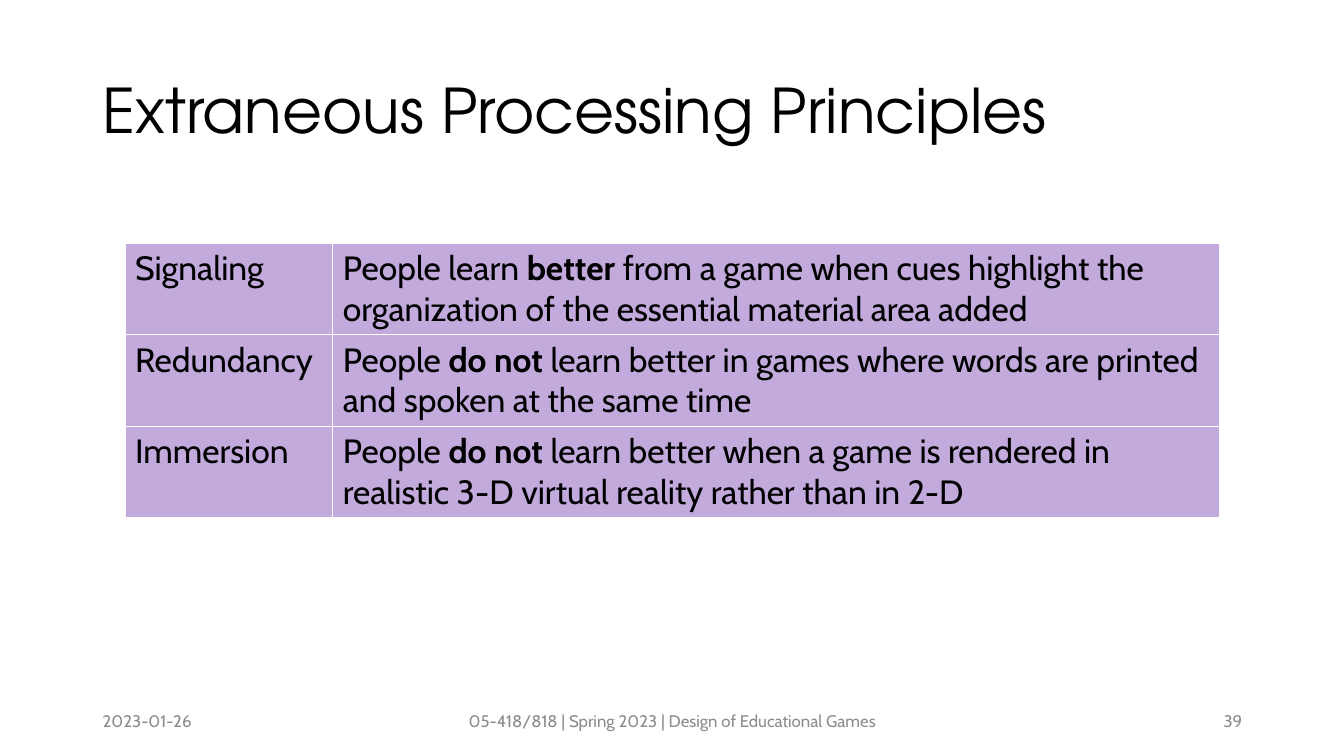
from lxml import etree
from pptx import Presentation
from pptx.dml.color import RGBColor
from pptx.enum.text import MSO_ANCHOR, PP_ALIGN
from pptx.oxml.ns import qn
from pptx.util import Inches, Pt

LEFT, CENTER, RIGHT = PP_ALIGN.LEFT, PP_ALIGN.CENTER, PP_ALIGN.RIGHT
MIDDLE = MSO_ANCHOR.MIDDLE
BLACK, GRAY, LILAC, WHITE = "000000", "8C8C8C", "C3AADD", "FFFFFF"
BODY_FONT, TITLE_FONT = "Cabin", "TeX Gyre Adventor"


def color(hex_string):
    return RGBColor.from_string(hex_string)


def style_run(run, font_name, size, hex_string, bold=False):
    run.font.name = font_name
    run.font.size = Pt(size)
    run.font.bold = bold
    run.font.color.rgb = color(hex_string)


presentation = Presentation()
presentation.slide_width = Inches(13.33)
presentation.slide_height = Inches(7.5)
slide = presentation.slides.add_slide(presentation.slide_layouts[6])

# Title and footer: text, left, top, width, height, alignment, font, size, color
text_boxes = [
    ("Extraneous Processing Principles", 0.92, 0.4, 11.5, 1.45, LEFT, TITLE_FONT, 44, BLACK),
    ("2023-01-26", 0.92, 6.95, 3, 0.4, LEFT, BODY_FONT, 12, GRAY),
    ("05-418/818 | Spring 2023 | Design of Educational Games",
     4.42, 6.95, 4.5, 0.4, CENTER, BODY_FONT, 12, GRAY),
    ("39", 9.42, 6.95, 3, 0.4, RIGHT, BODY_FONT, 12, GRAY),
]
for text, left, top, width, height, alignment, font_name, size, text_color in text_boxes:
    shape = slide.shapes.add_textbox(Inches(left), Inches(top), Inches(width), Inches(height))
    text_frame = shape.text_frame
    text_frame.word_wrap = True
    text_frame.vertical_anchor = MIDDLE
    text_frame.text = text
    paragraph = text_frame.paragraphs[0]
    paragraph.alignment = alignment
    if font_name == TITLE_FONT:
        paragraph.line_spacing = 0.9
    style_run(paragraph.runs[0], font_name, size, text_color)

# Principles: name, then the statement before, in and after the bold words
principles = [
    ("Signaling", "People learn ", "better",
     " from a game when cues highlight the organization of the essential material area added"),
    ("Redundancy", "People ", "do not ",
     "learn better in games where words are printed and spoken at the same time"),
    ("Immersion", "People ", "do not",
     " learn better when a game is rendered in realistic 3-D virtual reality rather than in 2-D"),
]
row_height = 0.91
table = slide.shapes.add_table(
    len(principles), 2, Inches(1.24), Inches(2.41),
    Inches(10.86), Inches(row_height * len(principles))).table
table.first_row = False
table.horz_banding = False
for column, width in zip(table.columns, (2.06, 8.8)):
    column.width = Inches(width)

for row, (name, before, emphasis, after) in zip(table.rows, principles):
    row.height = Inches(row_height)
    for cell, parts in zip(row.cells, ([name], [before, emphasis, after])):
        paragraph = cell.text_frame.paragraphs[0]
        for part in parts:
            run = paragraph.add_run()
            run.text = part
            style_run(run, BODY_FONT, 24, BLACK, bold=part == emphasis)
        properties = cell._tc.get_or_add_tcPr()
        for side in ("a:lnL", "a:lnR", "a:lnT", "a:lnB"):
            border = etree.SubElement(properties, qn(side), w=str(Pt(1)))
            border_fill = etree.SubElement(border, qn("a:solidFill"))
            etree.SubElement(border_fill, qn("a:srgbClr"), val=WHITE)
        cell.fill.solid()
        cell.fill.fore_color.rgb = color(LILAC)

presentation.save("out.pptx")
